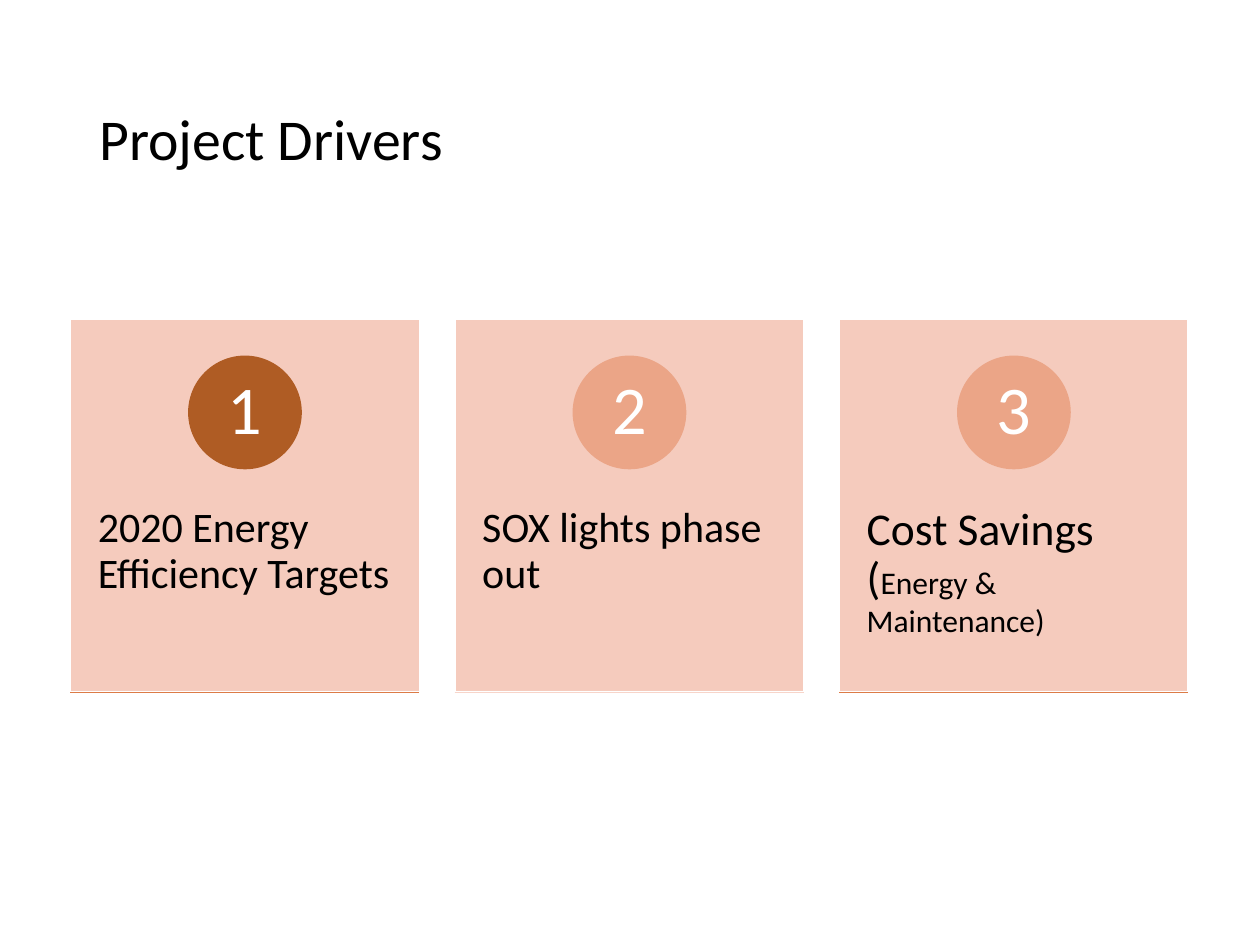
from dataclasses import dataclass

from lxml.etree import SubElement
from pptx import Presentation
from pptx.dml.color import RGBColor
from pptx.enum.shapes import MSO_CONNECTOR as Connector, MSO_SHAPE as Shape
from pptx.enum.text import MSO_ANCHOR as Anchor, MSO_AUTO_SIZE as AutoSize, PP_ALIGN as Align
from pptx.oxml.ns import qn
from pptx.util import Pt


@dataclass(frozen=True)
class Theme:
    font: str = "Calibri"
    text: str = "000000"
    white: str = "FFFFFF"
    card: str = "F5C6B6"
    card_opacity: int = 90
    dark: str = "AF5C24"
    light: str = "EBA587"
    rule: str = "DC7B47"
    pale_rule: str = "F7D5CA"
    title_size: int = 33
    number_size: int = 39
    label_size: int = 24
    heading_size: int = 26
    detail_size: int = 18


@dataclass(frozen=True)
class Driver:
    label: tuple[tuple[str, int], ...]  # (text, size) pieces
    badge: str
    rule: str


THEME = Theme()
DRIVERS = (
    Driver((("2020 Energy Efficiency Targets", THEME.label_size),), THEME.dark, THEME.rule),
    Driver((("SOX lights phase out", THEME.label_size),), THEME.light, THEME.pale_rule),
    Driver((("Cost Savings (", THEME.heading_size),
            ("Energy & Maintenance)", THEME.detail_size)), THEME.light, THEME.rule),
)

# Card grid, in points
CARD_LEFT, CARD_TOP, CARD_WIDTH, CARD_HEIGHT = 40.3, 182.3, 199.4, 213.2
CARD_PITCH = 219.7
BADGE_TOP, BADGE_SIZE = 203.7, 64
LABEL_TOP, LABEL_HEIGHT = 263.5, 128
RULE_Y = 395.8


def format_run(run, size: int, color: str) -> None:
    run.font.name = THEME.font
    run.font.size = Pt(size)
    run.font.color.rgb = RGBColor.from_string(color)


def set_insets(frame, horizontal: float, vertical: float) -> None:
    frame.margin_left = frame.margin_right = Pt(horizontal)
    frame.margin_top = frame.margin_bottom = Pt(vertical)


def add_filled(slide, kind, left: float, top: float, width: float, height: float,
               fill: str, line: str):
    shape = slide.shapes.add_shape(kind, Pt(left), Pt(top), Pt(width), Pt(height))
    shape.shadow.inherit = False
    shape.fill.solid()
    shape.fill.fore_color.rgb = RGBColor.from_string(fill)
    shape.line.color.rgb = RGBColor.from_string(line)
    shape.line.width = Pt(1)
    return shape


def add_title(slide, text: str) -> None:
    title = slide.shapes.title
    title.left, title.top, title.width, title.height = Pt(49.5), Pt(28.8), Pt(621), Pt(104.4)
    frame = title.text_frame
    frame.text = text
    frame.auto_size = AutoSize.NONE
    frame.vertical_anchor = Anchor.MIDDLE
    heading = frame.paragraphs[0]
    heading.alignment = Align.LEFT
    heading.line_spacing = 0.9
    format_run(heading.runs[0], THEME.title_size, THEME.text)


def add_card(slide, left: float) -> None:
    card = add_filled(slide, Shape.RECTANGLE, left, CARD_TOP, CARD_WIDTH, CARD_HEIGHT,
                      THEME.card, THEME.white)
    color = card.fill._xPr.find(qn("a:solidFill"))[0]
    SubElement(color, qn("a:alpha"), val=str(THEME.card_opacity * 1000))


def add_label(slide, left: float, driver: Driver) -> None:
    label = slide.shapes.add_textbox(Pt(left), Pt(LABEL_TOP), Pt(CARD_WIDTH), Pt(LABEL_HEIGHT))
    frame = label.text_frame
    frame.word_wrap = True
    set_insets(frame, 15.6, 26)
    paragraph = frame.paragraphs[0]
    paragraph.line_spacing = 0.9
    for text, size in driver.label:
        run = paragraph.add_run()
        run.text = text
        format_run(run, size, THEME.text)


def add_badge(slide, left: float, number: int, color: str) -> None:
    badge = add_filled(slide, Shape.OVAL, left + (CARD_WIDTH - BADGE_SIZE) / 2, BADGE_TOP,
                       BADGE_SIZE, BADGE_SIZE, color, color)
    frame = badge.text_frame
    frame.text = str(number)
    frame.vertical_anchor = Anchor.MIDDLE
    set_insets(frame, 5, 1)
    paragraph = frame.paragraphs[0]
    paragraph.alignment = Align.CENTER
    paragraph.line_spacing = 0.9
    format_run(paragraph.runs[0], THEME.number_size, THEME.white)


def add_rule(slide, left: float, color: str) -> None:
    rule = slide.shapes.add_connector(Connector.STRAIGHT, Pt(left), Pt(RULE_Y),
                                      Pt(left + CARD_WIDTH), Pt(RULE_Y))
    rule.line.color.rgb = RGBColor.from_string(color)
    rule.line.width = Pt(1)
    SubElement(rule._element.spPr, qn("a:effectLst"))


def main() -> None:
    deck = Presentation()
    deck.slide_width, deck.slide_height = Pt(720), Pt(540)
    slide = deck.slides.add_slide(deck.slide_layouts[5])  # title only

    add_title(slide, "Project Drivers")

    # One numbered card per driver
    for index, driver in enumerate(DRIVERS):
        left = CARD_LEFT + index * CARD_PITCH
        add_card(slide, left)
        add_label(slide, left, driver)
        add_badge(slide, left, index + 1, driver.badge)
        add_rule(slide, left, driver.rule)

    deck.save("out.pptx")


if __name__ == "__main__":
    main()
